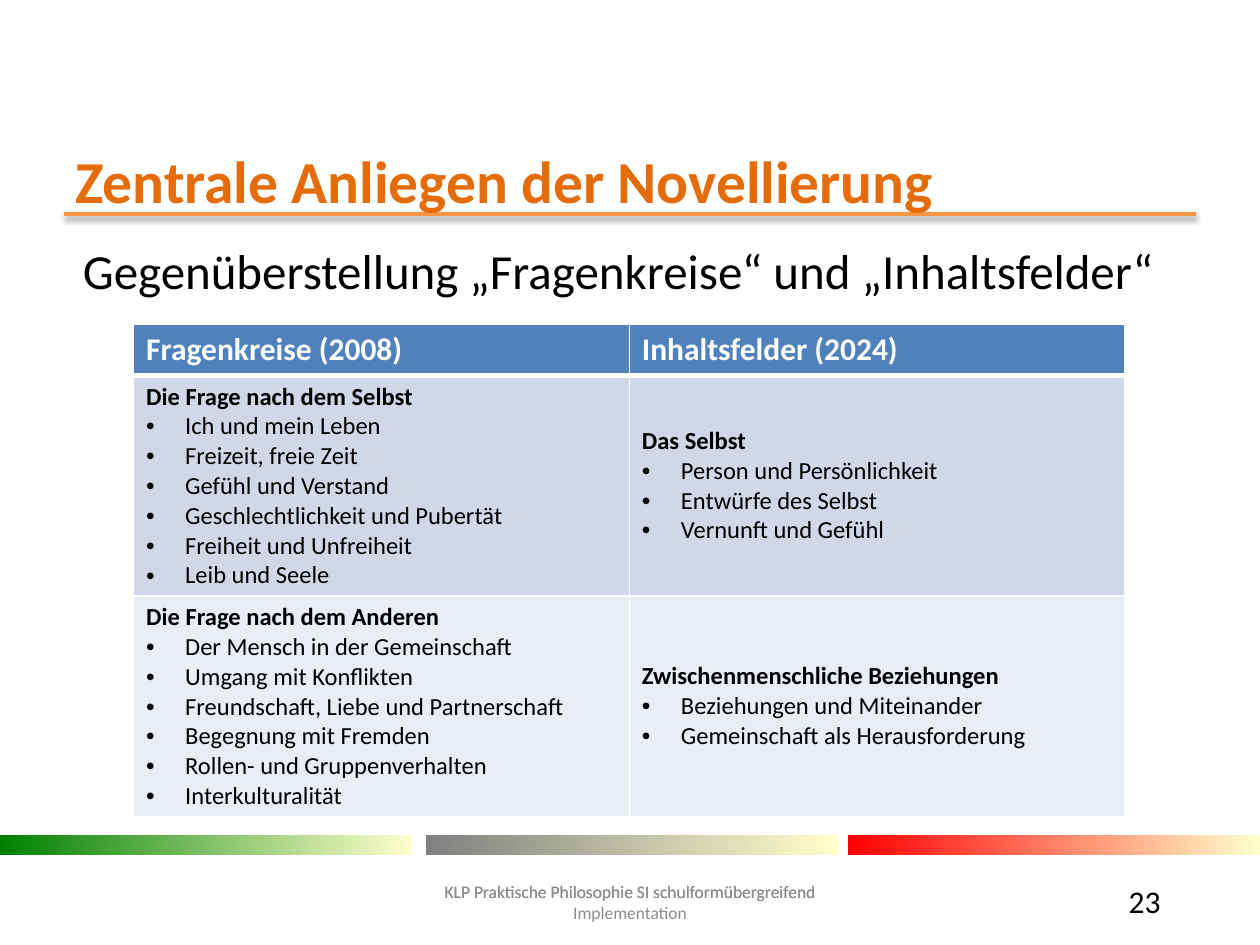
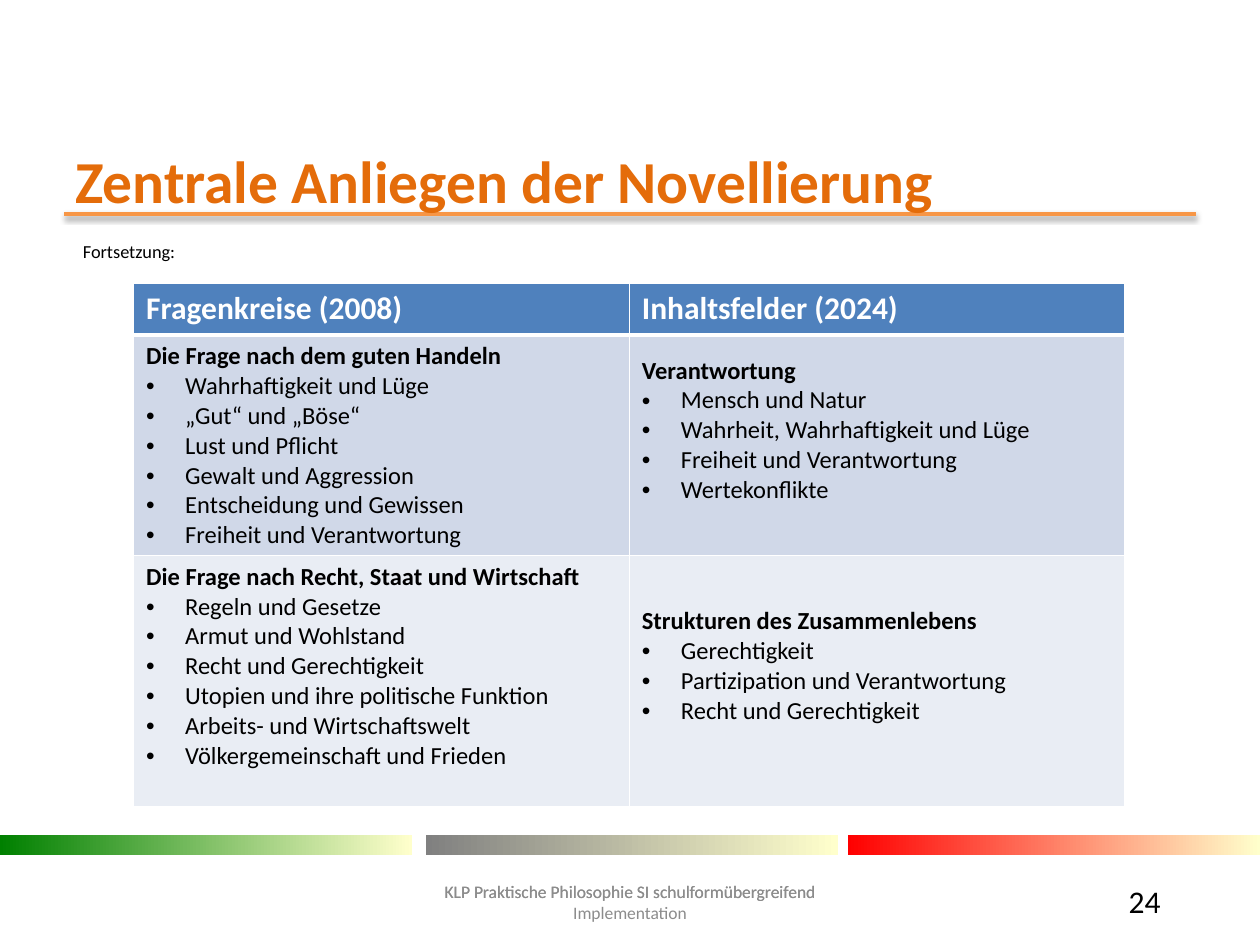
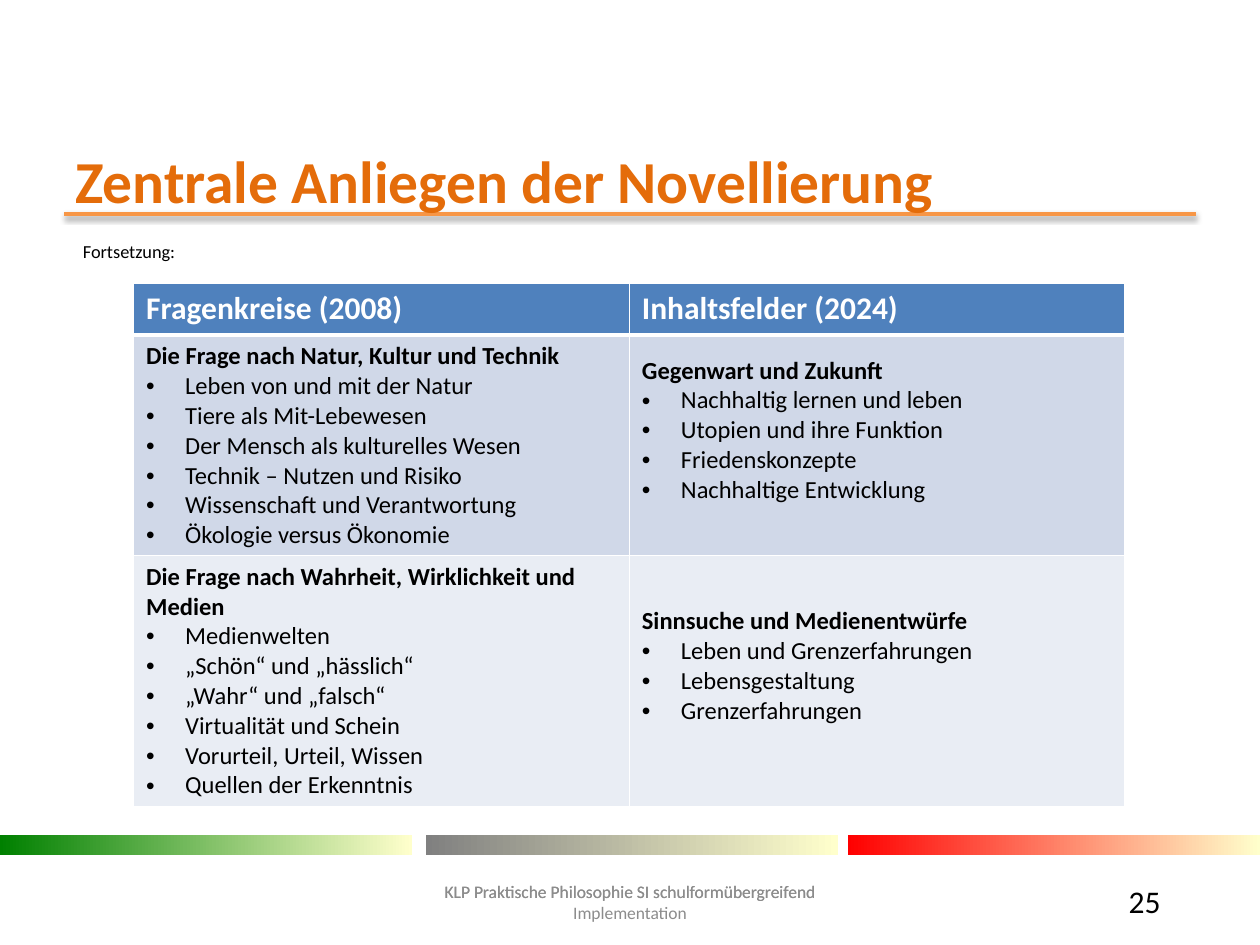
from lxml import etree
from pptx import Presentation
from pptx.dml.color import RGBColor
from pptx.enum.shapes import MSO_CONNECTOR, MSO_SHAPE
from pptx.enum.text import MSO_ANCHOR, PP_ALIGN
from pptx.oxml import parse_xml
from pptx.oxml.ns import nsdecls, qn
from pptx.util import Inches, Pt

FONT = "Calibri"
BLACK, WHITE, GREY = "000000", "FFFFFF", "8C8C8C"
TITLE_ORANGE, RULE_ORANGE = "E46C0A", "F79646"
HEADER_BLUE = "4F81BD"
ROW_FILLS = ["D0D8E8", "E9EDF4"]
BAND_STARTS = {0: "008000", 3.38: "808080", 6.73: "FF0000"}
BAND_END = "FFFFCC"

TITLE = "Zentrale Anliegen der Novellierung"
FOOTER_LINES = ["KLP Praktische Philosophie SI schulformübergreifend", "Implementation"]
TABLE_HEADINGS = ["Fragenkreise (2008)", "Inhaltsfelder (2024)"]
CELL_MARGIN = 0.05
LINE_HEIGHT = 0.24

# Each table row holds two cells; a cell is a heading followed by its bullets.
SLIDES = [
    {
        "number": 23,
        "intro": ("Gegenüberstellung „Fragenkreise“ und „Inhaltsfelder“", 28),
        "table_top": 2.57,
        "row_heights": [0.41, 1.75, 1.75],
        "lift": 0,
        "rows": [
            [["Die Frage nach dem Selbst", "Ich und mein Leben", "Freizeit, freie Zeit",
              "Gefühl und Verstand", "Geschlechtlichkeit und Pubertät",
              "Freiheit und Unfreiheit", "Leib und Seele"],
             ["Das Selbst", "Person und Persönlichkeit", "Entwürfe des Selbst",
              "Vernunft und Gefühl"]],
            [["Die Frage nach dem Anderen", "Der Mensch in der Gemeinschaft",
              "Umgang mit Konflikten", "Freundschaft, Liebe und Partnerschaft",
              "Begegnung mit Fremden", "Rollen- und Gruppenverhalten",
              "Interkulturalität"],
             ["Zwischenmenschliche Beziehungen", "Beziehungen und Miteinander",
              "Gemeinschaft als Herausforderung"]],
        ],
    },
    {
        "number": 24,
        "intro": ("Fortsetzung:", 10.5),
        "table_top": 2.25,
        "row_heights": [0.41, 1.75, 1.99],
        "lift": LINE_HEIGHT,
        "rows": [
            [["Die Frage nach dem guten Handeln", "Wahrhaftigkeit und Lüge",
              "„Gut“ und „Böse“", "Lust und Pflicht", "Gewalt und Aggression",
              "Entscheidung und Gewissen", "Freiheit und Verantwortung"],
             ["Verantwortung", "Mensch und Natur", "Wahrheit, Wahrhaftigkeit und Lüge",
              "Freiheit und Verantwortung", "Wertekonflikte"]],
            [["Die Frage nach Recht, Staat und Wirtschaft", "Regeln und Gesetze",
              "Armut und Wohlstand", "Recht und Gerechtigkeit",
              "Utopien und ihre politische Funktion", "Arbeits- und Wirtschaftswelt",
              "Völkergemeinschaft und Frieden"],
             ["Strukturen des Zusammenlebens", "Gerechtigkeit",
              "Partizipation und Verantwortung", "Recht und Gerechtigkeit"]],
        ],
    },
    {
        "number": 25,
        "intro": ("Fortsetzung:", 10.5),
        "table_top": 2.25,
        "row_heights": [0.41, 1.75, 1.99],
        "lift": LINE_HEIGHT,
        "rows": [
            [["Die Frage nach Natur, Kultur und Technik", "Leben von und mit der Natur",
              "Tiere als Mit-Lebewesen", "Der Mensch als kulturelles Wesen",
              "Technik – Nutzen und Risiko", "Wissenschaft und Verantwortung",
              "Ökologie versus Ökonomie"],
             ["Gegenwart und Zukunft", "Nachhaltig lernen und leben",
              "Utopien und ihre Funktion", "Friedenskonzepte",
              "Nachhaltige Entwicklung"]],
            [["Die Frage nach Wahrheit, Wirklichkeit und Medien", "Medienwelten",
              "„Schön“ und „hässlich“", "„Wahr“ und „falsch“",
              "Virtualität und Schein", "Vorurteil, Urteil, Wissen",
              "Quellen der Erkenntnis"],
             ["Sinnsuche und Medienentwürfe", "Leben und Grenzerfahrungen",
              "Lebensgestaltung", "Grenzerfahrungen"]],
        ],
    },
]


def rgb(hex_colour):
    return RGBColor.from_string(hex_colour)


def add_run(paragraph, text, size, colour, bold=False):
    run = paragraph.add_run()
    run.text = text
    run.font.name = FONT
    run.font.size = Pt(size)
    run.font.bold = bold
    run.font.color.rgb = rgb(colour)


def add_lines(frame, lines):
    """Yield one paragraph for each line, starting with the frame's own."""
    for index, line in enumerate(lines):
        yield (frame.add_paragraph() if index else frame.paragraphs[0]), line


def add_text(slide, box, lines, size, colour, bold=False, align=PP_ALIGN.LEFT,
             anchor=MSO_ANCHOR.TOP):
    shape = slide.shapes.add_textbox(*map(Inches, box))
    frame = shape.text_frame
    frame.word_wrap = True
    frame.vertical_anchor = anchor
    for paragraph, line in add_lines(frame, lines):
        paragraph.alignment = align
        add_run(paragraph, line, size, colour, bold)
    return shape


def add_title_rule(slide, left, top, width):
    rule = slide.shapes.add_connector(
        MSO_CONNECTOR.STRAIGHT, *map(Inches, (left, top, left + width, top)))
    rule.line.color.rgb = rgb(RULE_ORANGE)
    rule.line.width = Pt(2)
    rule._element.spPr.append(parse_xml(
        f'<a:effectLst {nsdecls("a")}>'
        f'<a:outerShdw blurRad="{Pt(3.1)}" dist="{Pt(1.6)}" dir="5400000" rotWithShape="0">'
        f'<a:srgbClr val="{BLACK}"><a:alpha val="38000"/></a:srgbClr>'
        '</a:outerShdw></a:effectLst>'))


def add_bands(slide, top, width, height):
    for left, start in BAND_STARTS.items():
        band = slide.shapes.add_shape(
            MSO_SHAPE.RECTANGLE, *map(Inches, (left, top, width, height)))
        band.shadow.inherit = False
        band.line.fill.background()
        band.fill.gradient()
        band.fill.gradient_angle = 0
        for stop, colour in zip(band.fill.gradient_stops, (start, BAND_END)):
            stop.color.rgb = rgb(colour)


def add_footer(slide, box):
    """The first line is set twice, which makes it stronger than the second."""
    for lines in (FOOTER_LINES, FOOTER_LINES[:1]):
        add_text(slide, box, lines, 10, GREY, align=PP_ALIGN.CENTER)


def add_intro(slide, box, text, size):
    shape = add_text(slide, box, [text], size, BLACK)
    shape.fill.solid()
    shape.fill.fore_color.rgb = rgb(WHITE)
    shape.text_frame.paragraphs[0]._p.get_or_add_pPr().set("marL", str(Inches(0.06)))


def style_cell(cell, fill, top=1, bottom=1):
    """Give the cell white borders, with widths in points, and a fill."""
    properties = cell._tc.get_or_add_tcPr()
    for side, width in {"L": 1, "R": 1, "T": top, "B": bottom}.items():
        properties.append(parse_xml(
            f'<a:ln{side} {nsdecls("a")} w="{Pt(width)}"><a:solidFill>'
            f'<a:srgbClr val="{WHITE}"/></a:solidFill></a:ln{side}>'))
    cell.fill.solid()
    cell.fill.fore_color.rgb = rgb(fill)


def add_bullet(paragraph):
    properties = paragraph._p.get_or_add_pPr()
    properties.set("marL", str(Inches(0.31)))
    properties.set("indent", str(Inches(-0.31)))
    etree.SubElement(properties, qn("a:buFont")).set("typeface", "Arial")
    etree.SubElement(properties, qn("a:buChar")).set("char", "•")


def fill_topic_cell(cell, topic):
    heading = topic[0]
    for paragraph, line in add_lines(cell.text_frame, topic):
        if line != heading:
            add_bullet(paragraph)
        add_run(paragraph, line, 14, BLACK, bold=line == heading)


def add_comparison_table(slide, left, top, width, row_heights, rows, lift):
    """Place the table; lift raises the centred text of the right column."""
    columns = len(TABLE_HEADINGS)
    table = slide.shapes.add_table(
        len(row_heights), columns,
        *map(Inches, (left, top, width, sum(row_heights)))).table
    table.horz_banding = False
    for row, height in zip(table.rows, row_heights):
        row.height = Inches(height)
    for column, heading in enumerate(TABLE_HEADINGS):
        table.columns[column].width = Inches(width / columns)
        cell = table.cell(0, column)
        style_cell(cell, HEADER_BLUE, bottom=3)
        add_run(cell.text_frame.paragraphs[0], heading, 18, WHITE, bold=True)
    for number, (topics, fill) in enumerate(zip(rows, ROW_FILLS), start=1):
        for column, topic in enumerate(topics):
            cell = table.cell(number, column)
            style_cell(cell, fill, top=3 if number == 1 else 1)
            fill_topic_cell(cell, topic)
        cell.vertical_anchor = MSO_ANCHOR.MIDDLE
        cell.margin_bottom = Inches(CELL_MARGIN + lift)


def add_comparison_slide(presentation, content):
    slide = presentation.slides.add_slide(presentation.slide_layouts[6])
    add_title_rule(slide, 0.51, 1.7, 8.98)
    add_bands(slide, 6.63, 3.27, 0.16)
    add_footer(slide, (3.27, 6.94, 3.46, 0.44))
    add_text(slide, (0.5, 1.23, 9, 0.39), [TITLE], 34, TITLE_ORANGE, bold=True,
             anchor=MSO_ANCHOR.MIDDLE)
    add_intro(slide, (0.5, 1.86, 9, 4.65), *content["intro"])
    add_text(slide, (8.86, 6.95, 0.64, 0.4), [str(content["number"])], 18, BLACK)
    add_comparison_table(slide, 1.06, content["table_top"], 7.87,
                         content["row_heights"], content["rows"], content["lift"])


def main():
    presentation = Presentation()
    presentation.slide_width = Inches(10)
    presentation.slide_height = Inches(7.5)
    for content in SLIDES:
        add_comparison_slide(presentation, content)
    presentation.save("out.pptx")


if __name__ == "__main__":
    main()
